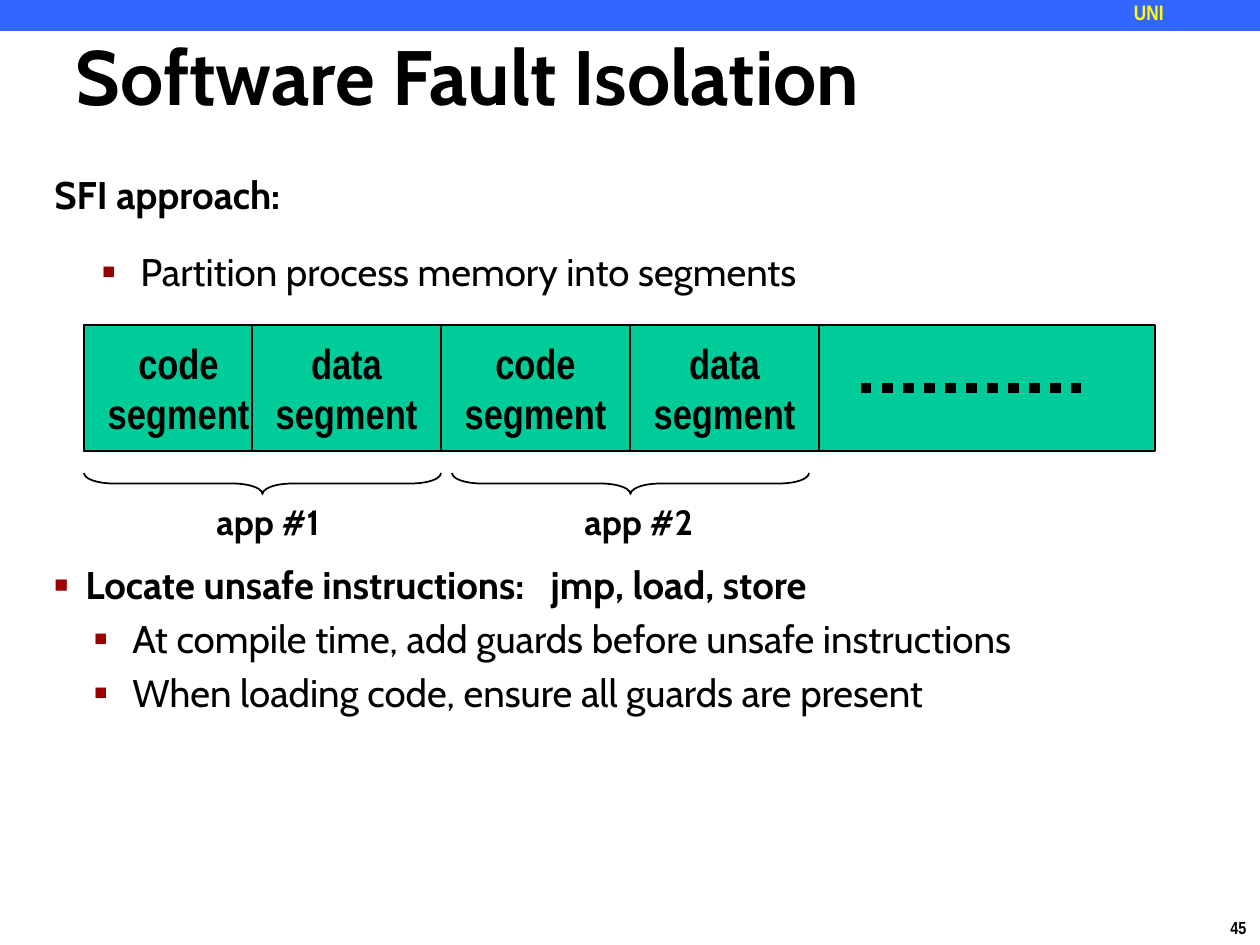
from lxml import etree
from pptx import Presentation
from pptx.dml.color import RGBColor
from pptx.enum.dml import MSO_LINE
from pptx.enum.shapes import MSO_CONNECTOR, MSO_SHAPE
from pptx.enum.text import MSO_ANCHOR, MSO_AUTO_SIZE, PP_ALIGN
from pptx.oxml.ns import qn
from pptx.util import Pt

PX = 914400 // 126
RECT, BRACE = MSO_SHAPE.RECTANGLE, MSO_SHAPE.LEFT_BRACE
LEFT, CENTER = PP_ALIGN.LEFT, PP_ALIGN.CENTER
MIDDLE, TOP = MSO_ANCHOR.MIDDLE, MSO_ANCHOR.TOP
NARROW, CABIN = "Arial Narrow", "Cabin"
BLACK, BLUE, GREEN, YELLOW, RED = "000000", "3366FF", "00CC99", "FFFF00", "990000"


def rgb(value):
    return RGBColor.from_string(value)


def write(shape, text, size=22, font=CABIN, color=BLACK, bold=True, align=LEFT,
          anchor=TOP, wrap=True, before=0, level=0, indent=0, hang=0,
          bullet=None, bullet_size=100, tracking=0, same_line=False):
    frame = shape.text_frame
    frame.word_wrap = wrap
    frame.auto_size = MSO_AUTO_SIZE.NONE
    frame.vertical_anchor = anchor
    paragraph = frame.paragraphs[-1]
    if paragraph.runs and not same_line:
        paragraph = frame.add_paragraph()
    if not same_line:
        paragraph.alignment = align
        paragraph.level = level
        paragraph.space_before = Pt(before)
    if bullet:
        properties = paragraph._p.get_or_add_pPr()
        properties.set("marL", str(indent * PX))
        properties.set("indent", str(-hang * PX))
        bullet_color = etree.SubElement(properties, qn("a:buClr"))
        etree.SubElement(bullet_color, qn("a:srgbClr"), val=RED)
        etree.SubElement(properties, qn("a:buSzPct"), val=str(bullet_size * 1000))
        etree.SubElement(properties, qn("a:buFont"), typeface="Arial")
        etree.SubElement(properties, qn("a:buChar"), char=bullet)
    run = paragraph.add_run()
    run.text = text
    run.font.size = Pt(size)
    run.font.name = font
    run.font.bold = bold
    run.font.color.rgb = rgb(color)
    if tracking:
        run._r.get_or_add_rPr().set("spc", str(tracking * 100))


prs = Presentation()
prs.slide_width, prs.slide_height = 1260 * PX, 945 * PX
slide = prs.slides.add_slide(prs.slide_layouts[5])
shapes = slide.shapes

page_number = shapes.add_textbox(1218 * PX, 911 * PX, 43 * PX, 34 * PX)
write(page_number, "45", size=10, font=NARROW, wrap=False)

banner = shapes.add_shape(RECT, 0, 0, 1260 * PX, 31 * PX)
banner.shadow.inherit = False
banner.fill.solid()
banner.fill.fore_color.rgb = rgb(BLUE)
banner.line.fill.background()

school = shapes.add_textbox(1134 * PX, 0, 126 * PX, 28 * PX)
school.text_frame.margin_left = school.text_frame.margin_right = 0
school.text_frame.margin_top = school.text_frame.margin_bottom = 0
write(school, "UNI", size=12, font=NARROW, color=YELLOW)

title = shapes.title
title.left, title.top, title.width, title.height = 63 * PX, -4 * PX, 1134 * PX, 158 * PX
write(title, "Software Fault Isolation", size=44, anchor=MIDDLE)

approach = shapes.add_textbox(42 * PX, 165 * PX, 1197 * PX, 145 * PX)
write(approach, "SFI approach:")
write(approach, "Partition process memory into segments", bold=False, before=17.3,
      level=1, indent=86, hang=39, bullet="▪", bullet_size=110)

guards = shapes.add_textbox(42 * PX, 555 * PX, 1197 * PX, 180 * PX)
write(guards, "Locate unsafe instructions:", indent=31, hang=31, bullet="■", bullet_size=60)
write(guards, " ", tracking=10, same_line=True)
write(guards, "jmp, load, store", same_line=True)
for step in ("At compile time, add guards before unsafe instructions",
             "When loading code, ensure all guards are present"):
    write(guards, step, bold=False, before=4.4, level=1, indent=78, hang=39,
          bullet="▪", bullet_size=110)

for left, width, content in ((84, 1071, None), (84, 189, "code"), (252, 189, "data"),
                             (441, 189, "code"), (630, 189, "data")):
    segment = shapes.add_shape(RECT, left * PX, 325 * PX, width * PX, 126 * PX)
    segment.shadow.inherit = False
    segment.fill.solid()
    segment.fill.fore_color.rgb = rgb(GREEN)
    segment.line.color.rgb = rgb(BLACK)
    segment.line.width = Pt(1)
    if content:
        for word in (content, "segment"):
            write(segment, word, size=24, font=NARROW, align=CENTER, anchor=MIDDLE, wrap=False)

more_segments = shapes.add_connector(MSO_CONNECTOR.STRAIGHT, 861 * PX, 388 * PX,
                                     1081 * PX, 388 * PX)
more_segments.line.color.rgb = rgb(BLACK)
more_segments.line.width = Pt(6)
more_segments.line.dash_style = MSO_LINE.ROUND_DOT
etree.SubElement(more_segments._element.spPr, qn("a:effectLst"))

for app, left in (("app #1", 84), ("app #2", 452)):
    group = shapes.add_group_shape()
    brace = group.shapes.add_shape(BRACE, (left + 168) * PX, 305 * PX, 21 * PX, 357 * PX)
    brace.rotation = 270
    brace.adjustments[0] = 1.42
    brace.shadow.inherit = False
    brace.fill.background()
    brace.line.color.rgb = rgb(BLACK)
    brace.line.width = Pt(1)
    label = group.shapes.add_textbox((left + 120) * PX, 494 * PX, 152 * PX, 55 * PX)
    write(label, app, size=20, wrap=False)

prs.save("out.pptx")
